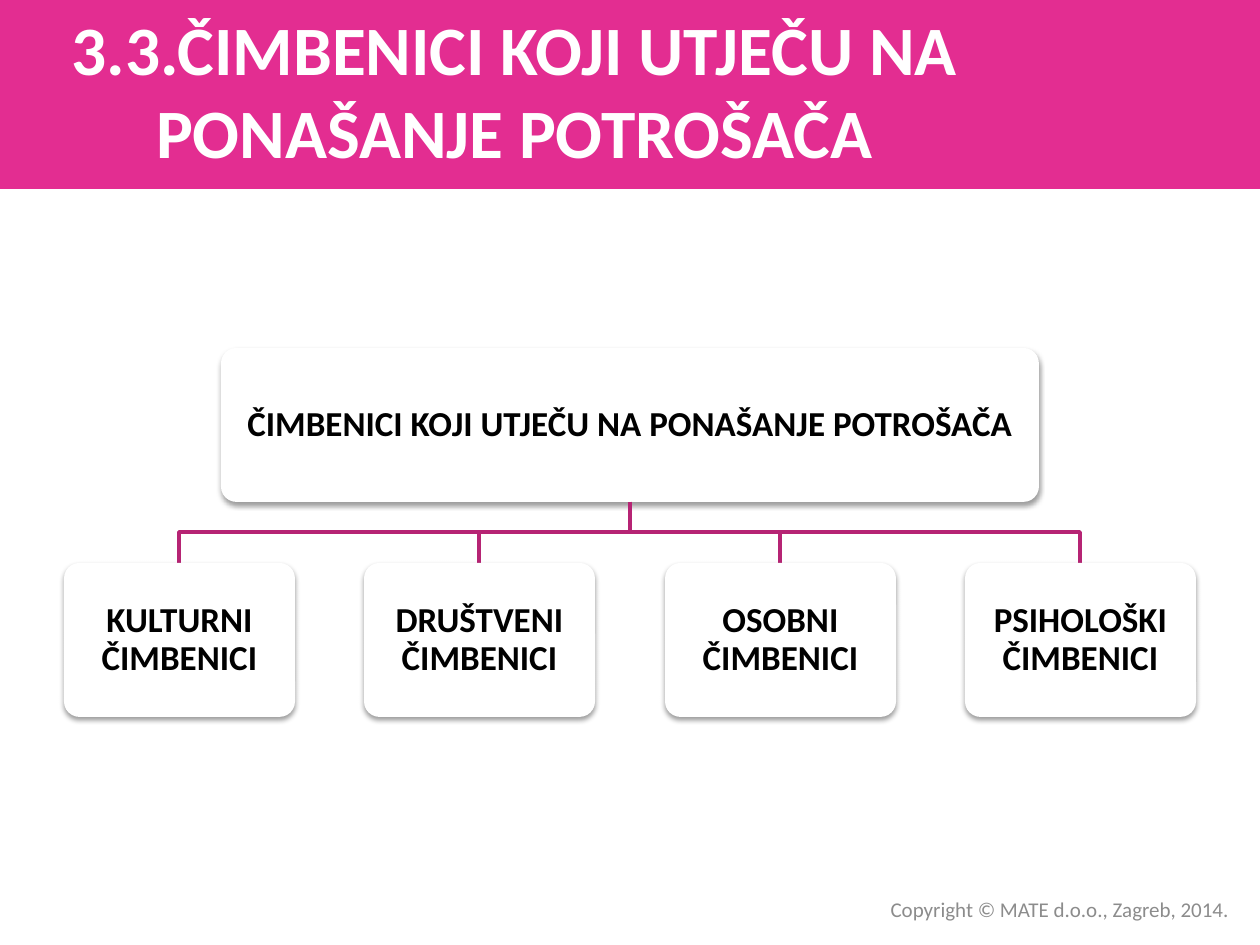
from typing import NamedTuple

from lxml import etree
from pptx import Presentation
from pptx import util as u
from pptx.dml.color import RGBColor
from pptx.enum import shapes, text
from pptx.oxml.ns import qn

SCALE = 914400 / 126
PINK, PLUM, WHITE, BLACK, GREY = "E32D91", "B62474", "FFFFFF", "000000", "8C8C8C"
FONT = "Calibri"


class Box(NamedTuple):
    left: int
    top: int
    width: int
    height: int

    @property
    def mid(self) -> int:
        return self.left + self.width // 2

    @property
    def base(self) -> int:
        return self.top + self.height


def px(n: float) -> int:
    return round(n * SCALE)


def rgb(code: str) -> RGBColor:
    return RGBColor.from_string(code)


def write(shape, words: str, *, size: float, color: str, bold: bool = False,
          align=text.PP_ALIGN.CENTER, inset: tuple = (13, 6), lead: float = 1.0) -> None:
    frame = shape.text_frame
    frame.word_wrap = True
    frame.vertical_anchor = text.MSO_ANCHOR.MIDDLE
    frame.margin_left = frame.margin_right = px(inset[0])
    frame.margin_top = frame.margin_bottom = px(inset[1])
    para = frame.paragraphs[0]
    para.alignment = align
    para.line_spacing = lead
    run = para.add_run()
    run.text = words
    run.font.name = FONT
    run.font.size = u.Pt(size)
    run.font.bold = bold
    run.font.color.rgb = rgb(color)


def block(slide, kind, box: Box, fill: str):
    shape = slide.shapes.add_shape(kind, *map(px, box))
    shape.shadow.inherit = False
    shape.fill.solid()
    shape.fill.fore_color.rgb = rgb(fill)
    shape.line.fill.background()
    return shape


def label(slide, box: Box, words: str, **style) -> None:
    write(slide.shapes.add_textbox(*map(px, box)), words, **style)


def shade(shape) -> None:
    effects = shape._element.spPr.find(qn("a:effectLst"))
    outer = etree.SubElement(effects, qn("a:outerShdw"), blurRad=str(u.Pt(3.1)),
                             dist=str(u.Pt(1.6)), dir="5400000", rotWithShape="0")
    tint = etree.SubElement(outer, qn("a:srgbClr"), val=BLACK)
    etree.SubElement(tint, qn("a:alpha"), val="38000")


def card(slide, box: Box, words: str) -> None:
    shape = block(slide, shapes.MSO_SHAPE.ROUNDED_RECTANGLE, box, WHITE)
    shape.adjustments[0] = 0.1
    shade(shape)
    write(shape, words, size=20, color=BLACK, bold=True, inset=(15, 15), lead=0.9)


def branch(slide, root: Box, leaf: Box) -> None:
    turn = (root.base + leaf.top) // 2
    pen = slide.shapes.build_freeform(root.mid, root.base, scale=SCALE)
    pen.add_line_segments([(root.mid, turn), (leaf.mid, turn), (leaf.mid, leaf.top)],
                          close=False)
    line = pen.convert_to_shape()
    line.shadow.inherit = False
    line.fill.background()
    line.line.color.rgb = rgb(PLUM)
    line.line.width = u.Pt(2)


def main() -> None:
    deck = Presentation()
    deck.slide_width, deck.slide_height = u.Inches(10), u.Inches(7.5)
    slide = deck.slides.add_slide(deck.slide_layouts[6])

    block(slide, shapes.MSO_SHAPE.RECTANGLE, Box(0, 0, 1260, 189), PINK)

    topic = "ČIMBENICI KOJI UTJEČU NA PONAŠANJE POTROŠAČA"
    root = Box(221, 348, 818, 154)
    card(slide, root, topic)
    kinds = ("KULTURNI", "DRUŠTVENI", "OSOBNI", "PSIHOLOŠKI")
    first, last = 64, 965
    step = (last - first) / (len(kinds) - 1)
    for i, kind in enumerate(kinds):
        leaf = Box(round(first + i * step), 563, 231, 154)
        branch(slide, root, leaf)
        card(slide, leaf, f"{kind} ČIMBENICI")

    label(slide, Box(0, 10, 1029, 158), f"3.3.{topic}", size=39.6, color=WHITE, bold=True)
    label(slide, Box(591, 890, 651, 38), "Copyright © MATE d.o.o., Zagreb, 2014.",
          size=12, color=GREY, align=text.PP_ALIGN.RIGHT)

    deck.save("out.pptx")


if __name__ == "__main__":
    main()
